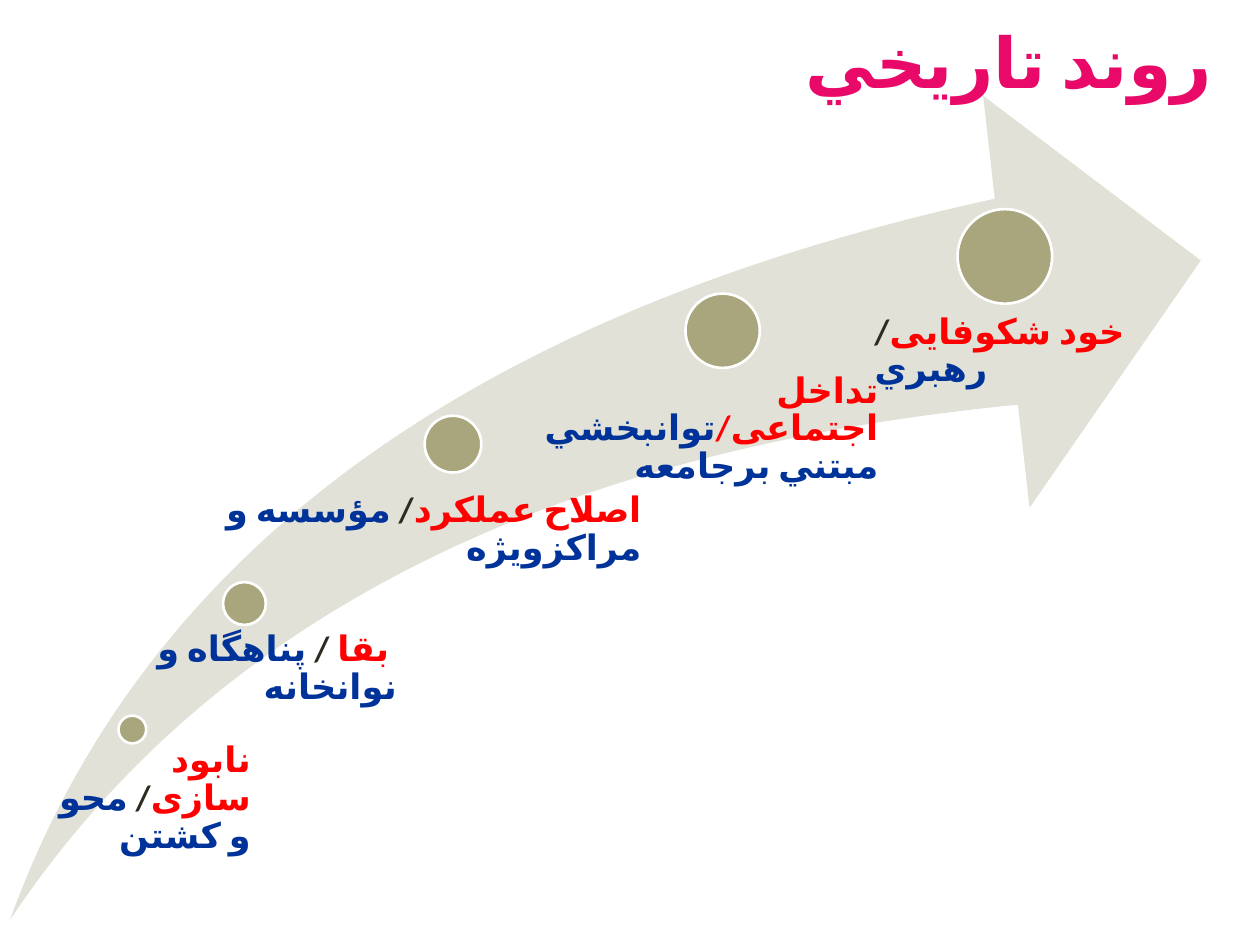
from dataclasses import dataclass

from lxml.etree import SubElement
from pptx import Presentation
from pptx.dml.color import RGBColor
from pptx.enum.shapes import MSO_SHAPE
from pptx.enum.text import MSO_ANCHOR, PP_ALIGN
from pptx.oxml.ns import qn
from pptx.slide import Slide
from pptx.util import Inches, Pt

COLORS = {
    "title": "E90969",
    "arrow": "E2E1D7",
    "dot": "A9A57C",
    "outline": "FFFFFF",
    "stage": "FF0000",
    "slash": "2F2B20",
    "place": "003399",
}


@dataclass
class SlideBuilder:
    """Draws styled elements on a slide, measured on a grid of 100 columns by 75 rows."""

    slide: Slide
    font: str = "Calibri"
    language: str = "fa-IR"
    cell: float = 0.1

    def length(self, cells):
        return Inches(cells * self.cell)

    def figure(self, preset, place, fill, outline=None):
        shape = self.slide.shapes.add_shape(preset, *map(self.length, place))
        shape.shadow.inherit = False
        shape.fill.solid()
        shape.fill.fore_color.rgb = RGBColor.from_string(COLORS[fill])
        if outline:
            shape.line.color.rgb = RGBColor.from_string(COLORS[outline])
            shape.line.width = Pt(1.5)
        else:
            shape.line.fill.background()
        return shape

    def arrow(self, place):
        shape = self.figure(MSO_SHAPE.SWOOSH_ARROW, place, "arrow")
        shape.adjustments[0] = 0.25
        shape.adjustments[1] = 0.25

    def dot(self, left, top, diameter):
        self.figure(MSO_SHAPE.OVAL, (left, top, diameter, diameter), "dot", "outline")

    def text(self, place, runs, size, insets, align=PP_ALIGN.RIGHT,
             right_to_left=True, anchor=MSO_ANCHOR.TOP, spacing=0.9):
        frame = self.slide.shapes.add_textbox(*map(self.length, place)).text_frame
        frame.word_wrap = True
        frame.vertical_anchor = anchor
        (frame.margin_left, frame.margin_top,
         frame.margin_right, frame.margin_bottom) = map(self.length, insets)
        paragraph = frame.paragraphs[0]
        paragraph.alignment = align
        paragraph.line_spacing = spacing
        if right_to_left:
            paragraph._p.get_or_add_pPr().set("rtl", "1")
        for wording, color in runs:
            run = paragraph.add_run()
            run.text = wording
            run.font.name = self.font
            run.font.size = Pt(size)
            run.font.bold = True
            run.font.color.rgb = RGBColor.from_string(COLORS[color])
            properties = run._r.get_or_add_rPr()
            properties.set("lang", self.language)
            SubElement(properties, qn("a:cs")).set("typeface", self.font)


STAGES = [
    ((9.4, 56.8, 2.2), (2.8, 58.9, 17.1, 14.1), 1.2, PP_ALIGN.RIGHT, True,
     [("نابود سازی", "stage"), ("/ ", "slash"), ("محو و کشتن", "place")]),
    ((17.7, 46.2, 3.4), (3.2, 50.1, 28.3, 18.6), 1.8, PP_ALIGN.RIGHT, True,
     [(" ", "slash"), ("بقا", "stage"), (" / ", "slash"), ("پناهگاه و نوانخانه", "place")]),
    ((33.7, 33, 4.5), (12.2, 39.1, 38.7, 27.4), 2.4, PP_ALIGN.RIGHT, True,
     [("اصلاح عملکرد", "stage"), ("/ ", "slash"), ("مؤسسه و مراكزويژه", "place")]),
    ((54.4, 23.3, 5.9), (39.8, 29.6, 29.9, 39.6), 3.1, PP_ALIGN.RIGHT, False,
     [("تداخل اجتماعی/", "stage"), ("توانبخشي مبتني برجامعه", "place")]),
    ((76, 16.6, 7.5), (65.4, 24.9, 26.8, 43.5), 4, PP_ALIGN.LEFT, False,
     [("خود شکوفایی", "stage"), ("/ ", "slash"), ("رهبري", "place")]),
]


def main():
    presentation = Presentation()
    presentation.slide_width = Inches(10)
    presentation.slide_height = Inches(7.5)
    builder = SlideBuilder(presentation.slides.add_slide(presentation.slide_layouts[6]))
    builder.text((7.5, 1.3, 89.7, 7.3), [("روند تاريخي", "title")], 40,
                 (1, 0.5, 1, 0.5), anchor=MSO_ANCHOR.BOTTOM, spacing=1.0)
    builder.arrow((0.8, 7.6, 94.5, 65.4))
    for dot, place, inset, align, right_to_left, runs in STAGES:
        builder.dot(*dot)
        builder.text(place, runs, 20, (inset, 0, 0, 0), align, right_to_left)
    presentation.save("out.pptx")


if __name__ == "__main__":
    main()
